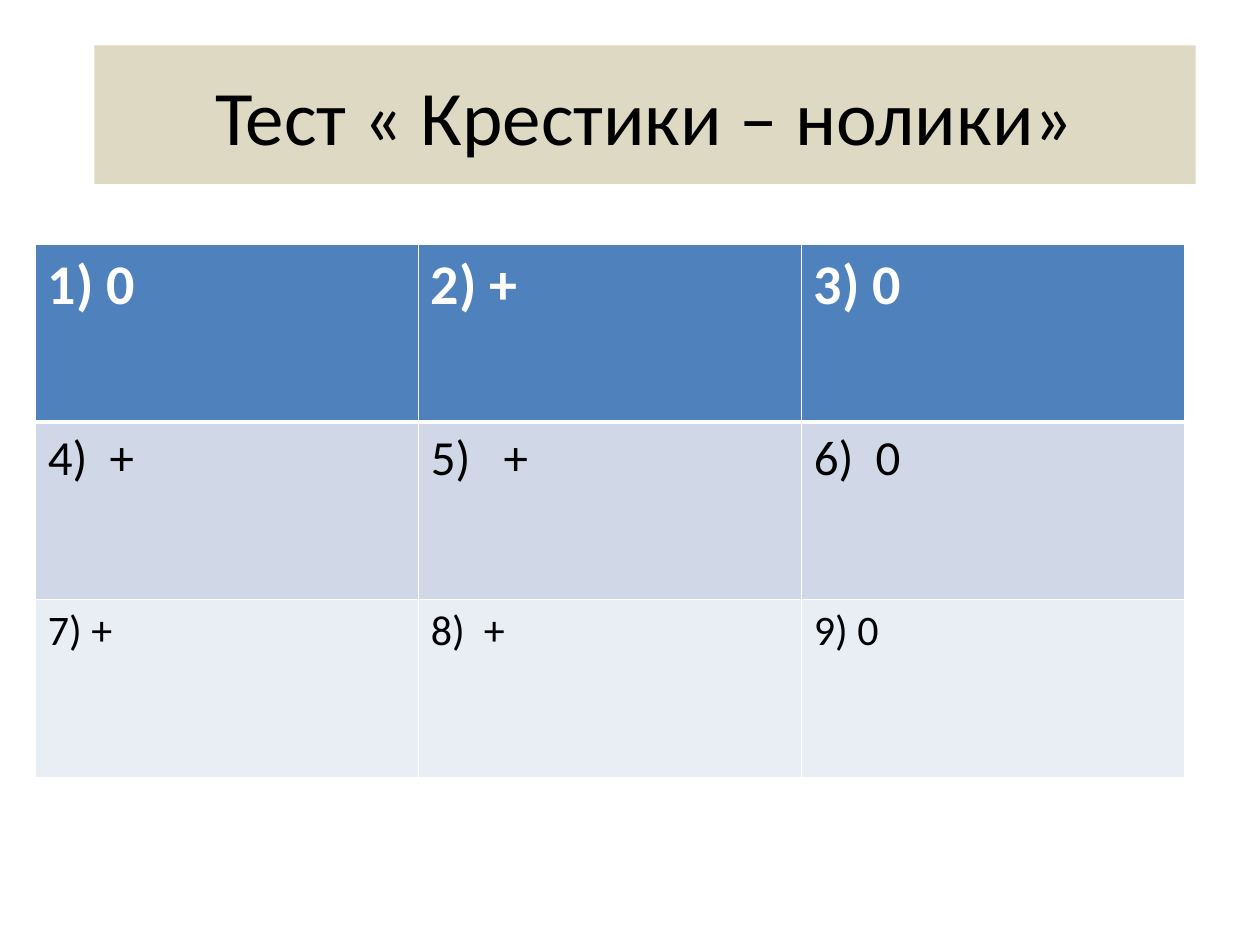
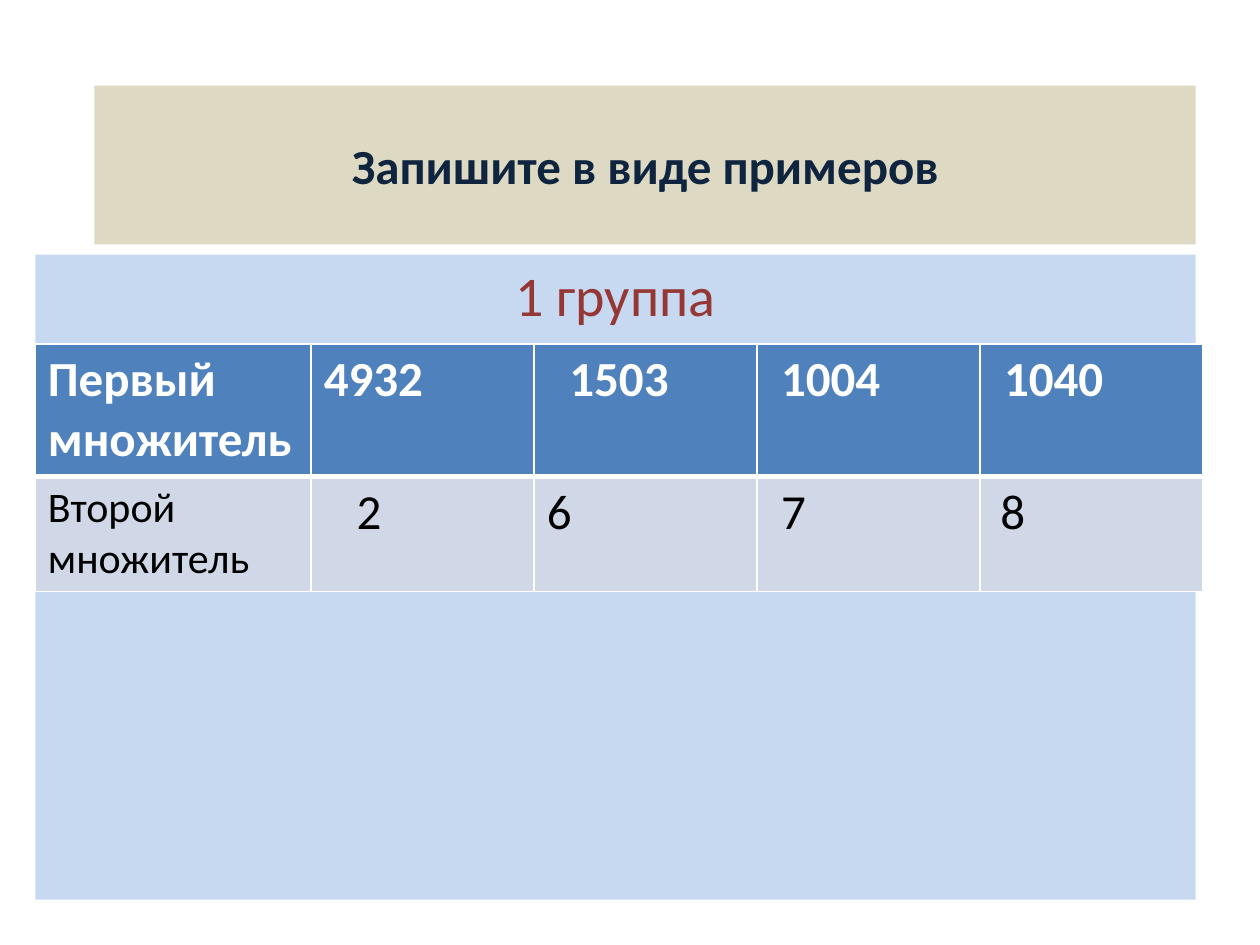
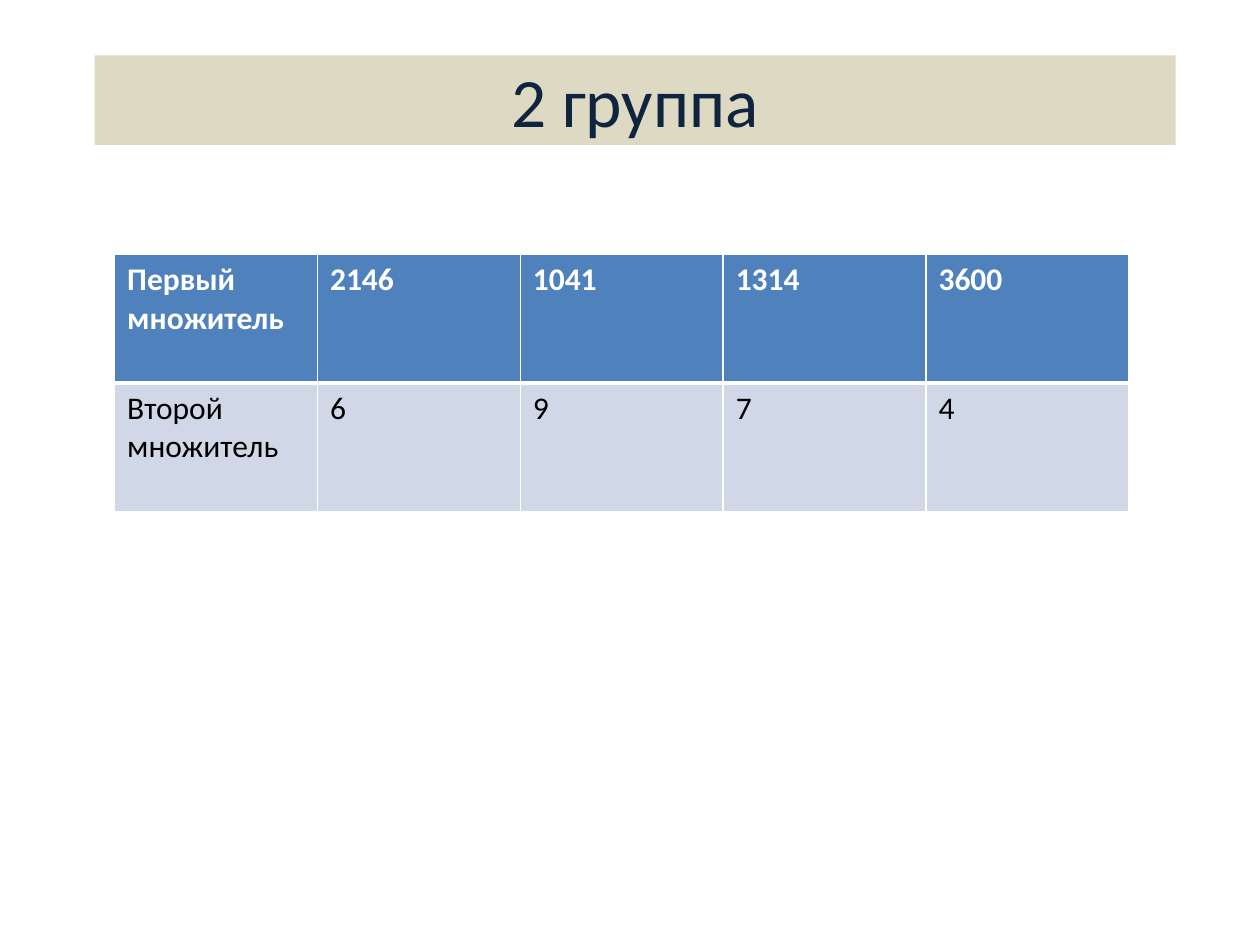
from lxml.etree import SubElement
from pptx import Presentation
from pptx.dml.color import RGBColor
from pptx.enum.shapes import MSO_SHAPE as Shape
from pptx.enum.text import MSO_ANCHOR as Anchor, PP_ALIGN as Align
from pptx.oxml.ns import qn
from pptx.util import Inches, Pt

FONT = "Calibri"
WHITE = RGBColor(0xFF, 0xFF, 0xFF)
BLACK = RGBColor(0x00, 0x00, 0x00)
NAVY = RGBColor(0x0F, 0x24, 0x3E)
BRICK = RGBColor(0x95, 0x37, 0x35)
SAND = RGBColor(0xDD, 0xD9, 0xC3)
SKY = RGBColor(0xC6, 0xD9, 0xF1)
HEADER_BLUE = RGBColor(0x4F, 0x81, 0xBD)
ROW_BANDS = (RGBColor(0xD0, 0xD8, 0xE8), RGBColor(0xE9, 0xED, 0xF4))
CELL_MARGIN = 0.1
BAND_LEFT = 0.75


class Deck:
    def __init__(self):
        self.presentation = Presentation()
        self.presentation.slide_width = Inches(10)
        self.presentation.slide_height = Inches(7.5)
        self.slide = None

    def add_slide(self):
        layout = self.presentation.slide_layouts[6]
        self.slide = self.presentation.slides.add_slide(layout)

    def add_text(self, paragraph, text, size, color, bold=False):
        run = paragraph.add_run()
        run.text = text
        run.font.name = FONT
        run.font.size = Pt(size)
        run.font.color.rgb = color
        run.font.bold = bold

    def panel(self, left, top, width, height, fill, text, size, color,
              bold=False, anchor=Anchor.MIDDLE, space_before=0):
        shape = self.slide.shapes.add_shape(
            Shape.RECTANGLE, Inches(left), Inches(top), Inches(width), Inches(height))
        shape.shadow.inherit = False
        shape.fill.solid()
        shape.fill.fore_color.rgb = fill
        shape.line.fill.background()
        frame = shape.text_frame
        frame.word_wrap = True
        frame.vertical_anchor = anchor
        paragraph = frame.paragraphs[0]
        paragraph.alignment = Align.CENTER
        paragraph.space_before = Pt(space_before)
        self.add_text(paragraph, text, size, color, bold)

    def title(self, top, width, height, text, size, color, bold=False):
        self.panel(BAND_LEFT, top, width, height, SAND, text, size, color, bold)

    def border(self, cell, side, width):
        properties = cell._tc.get_or_add_tcPr()
        line = SubElement(properties, qn(f"a:ln{side}"), w=str(Pt(width)))
        fill = SubElement(line, qn("a:solidFill"))
        SubElement(fill, qn("a:srgbClr"), val=str(WHITE))

    def table(self, left, top, column_widths, row_heights, rows, sizes, indents=None):
        indents = indents or {}
        table = self.slide.shapes.add_table(
            len(rows), len(column_widths), Inches(left), Inches(top),
            Inches(sum(column_widths)), Inches(sum(row_heights))).table
        for column, width in zip(table.columns, column_widths):
            column.width = Inches(width)
        for row, height in zip(table.rows, row_heights):
            row.height = Inches(height)
        for row_index, texts in enumerate(rows):
            is_header = row_index == 0
            fill = HEADER_BLUE if is_header else ROW_BANDS[(row_index - 1) % 2]
            for column_index, text in enumerate(texts):
                cell = table.cell(row_index, column_index)
                position = row_index, column_index
                cell.margin_left = Inches(CELL_MARGIN + indents.get(position, 0))
                for side in "LR":
                    self.border(cell, side, 1)
                self.border(cell, "T", 3 if row_index == 1 else 1)
                self.border(cell, "B", 3 if is_header else 1)
                cell.fill.solid()
                cell.fill.fore_color.rgb = fill
                size = sizes[row_index]
                if isinstance(size, tuple):
                    size = size[0] if column_index == 0 else size[1]
                self.add_text(cell.text_frame.paragraphs[0], text, size,
                              WHITE if is_header else BLACK, is_header)

    def save(self):
        self.presentation.save("out.pptx")


def main():
    deck = Deck()

    deck.add_slide()
    deck.title(0.36, 8.74, 1.1, "Тест « Крестики – нолики»", 44, BLACK)
    deck.table(0.28, 1.94, [3.04] * 3, [1.41] * 3,
               [["1) 0", "2) +", "3) 0"],
                ["4)  +", "5)   +", "6)  0"],
                ["7) +", "8)  +", "9) 0"]],
               [32, 28, 24])

    deck.add_slide()
    deck.title(0.68, 8.74, 1.26, "Запишите в виде примеров", 28, NAVY, bold=True)
    deck.panel(0.28, 2.02, 9.21, 5.12, SKY, "1 группа", 32, BRICK,
               anchor=Anchor.TOP, space_before=6.4)
    deck.table(0.28, 2.73, [2.19] + [1.77] * 4, [1.04, 0.89],
               [["Первый множитель", "4932", "1503", "1004", "1040"],
                ["Второй множитель", "2", "6", "7", "8"]],
               [28, (24, 28)],
               {(0, 2): 0.18, (0, 3): 0.09, (0, 4): 0.09,
                (1, 1): 0.26, (1, 3): 0.09, (1, 4): 0.06})

    deck.add_slide()
    deck.title(0.44, 8.58, 0.71, "2 группа", 39.6, NAVY)
    deck.table(0.91, 2.02, [1.61] * 5, [1.02] * 2,
               [["Первый множитель", "2146", "1041", "1314", "3600"],
                ["Второй множитель", "6", "9", "7", "4"]],
               [18, 18])

    deck.save()


if __name__ == "__main__":
    main()
